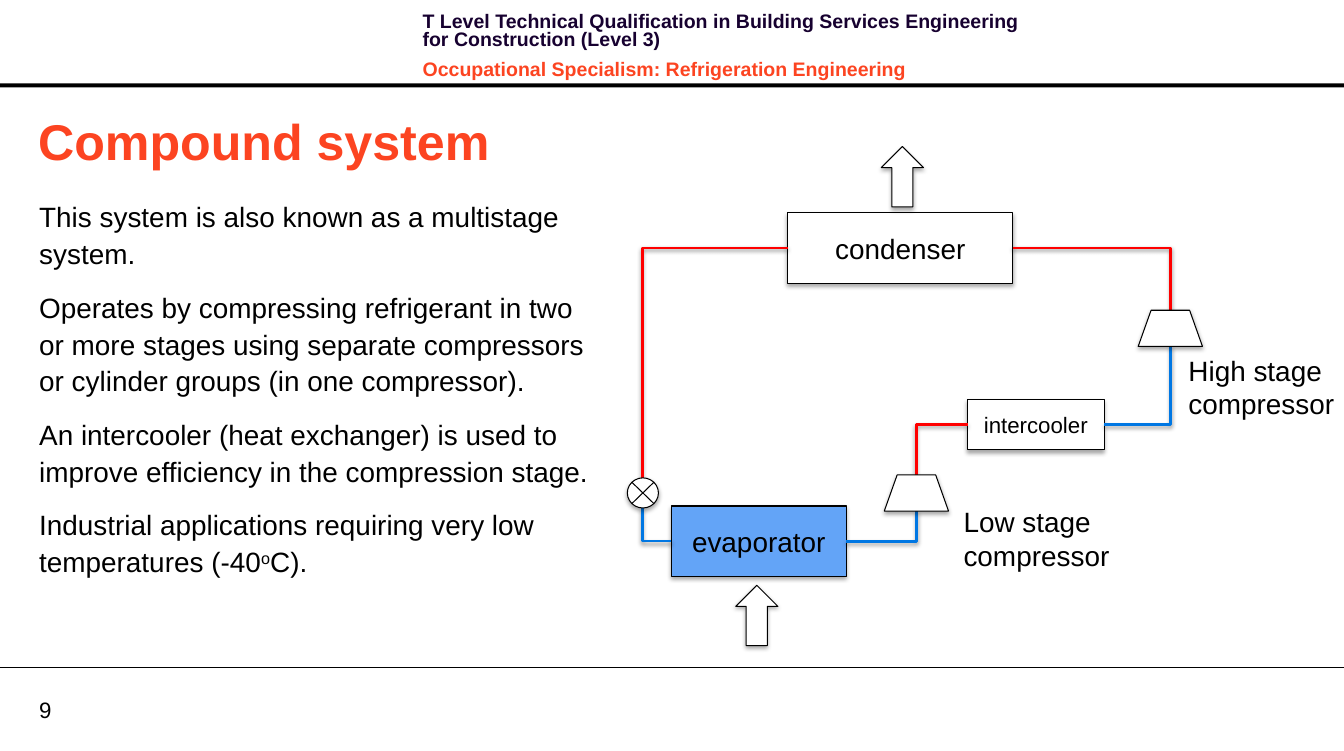
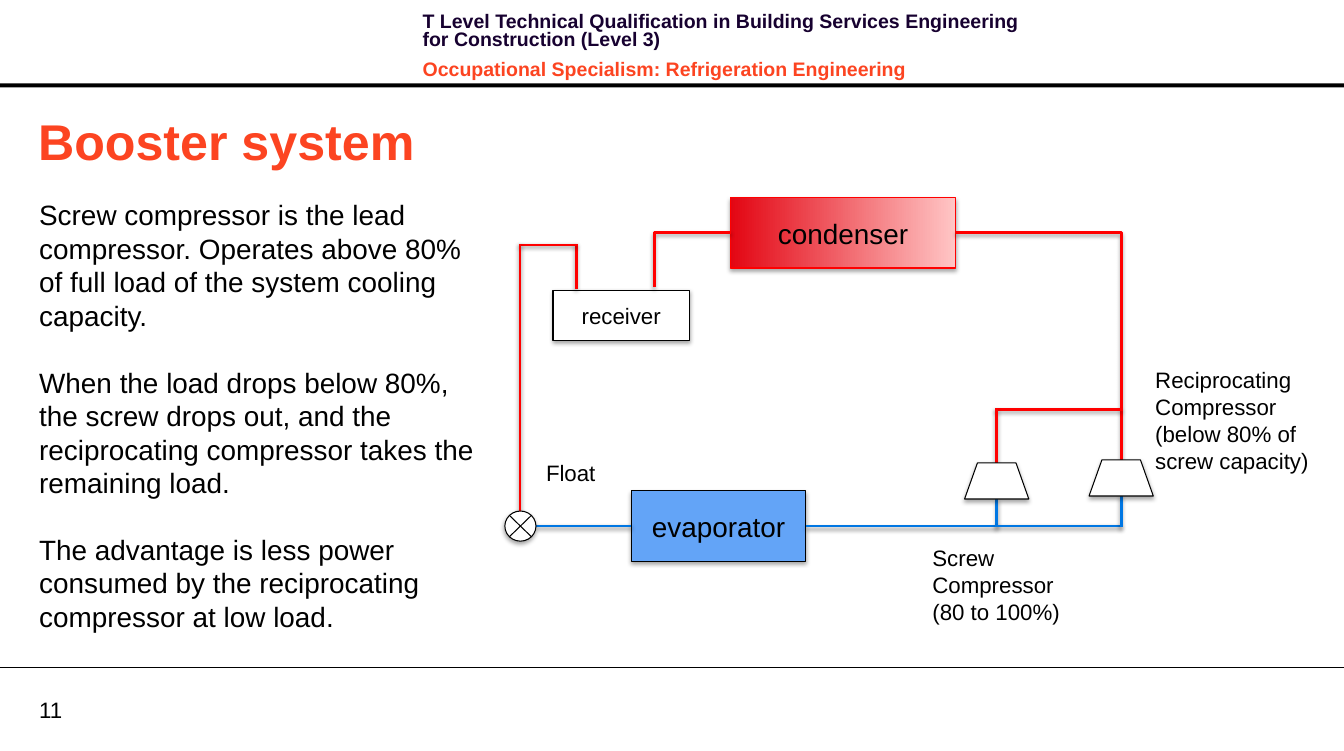
from dataclasses import dataclass

import lxml.etree
import pptx
import pptx.dml.color
import pptx.enum.shapes
import pptx.enum.text
import pptx.oxml.ns
import pptx.shapes.autoshape
import pptx.shapes.connector
import pptx.slide
import pptx.util

Inches = pptx.util.Inches
Pt = pptx.util.Pt
qn = pptx.oxml.ns.qn
MSO_SHAPE = pptx.enum.shapes.MSO_SHAPE
STRAIGHT = pptx.enum.shapes.MSO_CONNECTOR.STRAIGHT
ELBOW = pptx.enum.shapes.MSO_CONNECTOR.ELBOW
MIDDLE = pptx.enum.text.MSO_ANCHOR.MIDDLE

# Shared style
FONT = "Arial"
BLACK, WHITE = "000000", "FFFFFF"
NAVY, ORANGE = "170130", "FC4421"
HOT, COLD, ICE = "FF0000", "0077E3", "63A4F7"
WIDTH, HEIGHT = 13.39, 7.48
MARGIN = 0.39


@dataclass
class Text:
    left: float
    top: float
    width: float
    height: float
    paras: list[str]  # text between ^ marks is superscript
    size: float = 20
    color: str = BLACK
    bold: bool = False
    spacing: float | pptx.util.Length = 1.0
    after: float = 0
    middle: bool = False
    last_color: str = ""  # colour of the last paragraph, if it differs


@dataclass
class Box:
    left: float
    top: float
    width: float
    height: float
    label: str
    size: float = 20
    fill: str = WHITE
    fade: str = ""  # second colour, towards the right
    line: str = BLACK


@dataclass
class Symbol:
    kind: pptx.enum.shapes.MSO_SHAPE
    left: float
    top: float
    width: float
    height: float
    rotation: float = 0


@dataclass
class Pipe:
    color: str
    points: list[tuple[float, float]]


@dataclass
class Page:
    number: int
    title: str
    body: Text
    boxes: list[Box]
    pipes: list[Pipe]
    symbols: list[Symbol]
    captions: list[Text]


def compressor(left: float, top: float) -> Symbol:
    return Symbol(MSO_SHAPE.FLOWCHART_MANUAL_OPERATION, left, top, 0.64, 0.36, 180)


def valve(left: float, top: float) -> Symbol:
    return Symbol(MSO_SHAPE.FLOWCHART_SUMMING_JUNCTION, left, top, 0.31, 0.3)


def heat_arrow(left: float, top: float) -> Symbol:
    return Symbol(MSO_SHAPE.UP_ARROW, left, top, 0.42, 0.6)


def condenser(left: float, top: float, **look: str) -> Box:
    return Box(left, top, 2.24, 0.7, "condenser", **look)


def evaporator(left: float, top: float) -> Box:
    return Box(left, top, 1.74, 0.7, "evaporator", fill=ICE)


def vessel(left: float, top: float, label: str) -> Box:
    return Box(left, top, 1.36, 0.5, label, 16)


# Drawing
def rgb(color: str) -> pptx.dml.color.RGBColor:
    return pptx.dml.color.RGBColor.from_string(color)


def style_font(font, size: float, color: str, bold: bool = False) -> None:
    font.name, font.size, font.bold = FONT, Pt(size), bold
    font.color.rgb = rgb(color)


def set_effects(s, opacity: int = 0, distance: int = 0) -> None:
    """Give the shape its own effect list, with a soft shadow if opacity is set."""
    effects = lxml.etree.SubElement(s._element.spPr, qn("a:effectLst"))
    if opacity:
        shadow = lxml.etree.SubElement(
            effects, qn("a:outerShdw"), blurRad="40000", dist=str(distance),
            dir="5400000", rotWithShape="0")
        tint = lxml.etree.SubElement(shadow, qn("a:srgbClr"), val=BLACK)
        lxml.etree.SubElement(tint, qn("a:alpha"), val=str(opacity * 1000))


def add_text(slide: pptx.slide.Slide, t: Text) -> None:
    s = slide.shapes.add_textbox(*map(Inches, (t.left, t.top, t.width, t.height)))
    tf = s.text_frame
    tf.word_wrap = True
    tf.margin_left = tf.margin_top = tf.margin_right = tf.margin_bottom = 0
    if t.middle:
        tf.vertical_anchor = MIDDLE
    colors = [t.color] * (len(t.paras) - 1) + [t.last_color or t.color]
    for i, (para, color) in enumerate(zip(t.paras, colors)):
        p = tf.paragraphs[0] if i == 0 else tf.add_paragraph()
        p.line_spacing = t.spacing
        p.space_after = Pt(t.after)
        for j, part in enumerate(para.split("^")):
            r = p.add_run()
            r.text = part
            style_font(r.font, t.size, color, t.bold)
            if j % 2:
                r._r.get_or_add_rPr().set("baseline", "30000")


def add_box(slide: pptx.slide.Slide, b: Box) -> pptx.shapes.autoshape.Shape:
    s = slide.shapes.add_shape(
        MSO_SHAPE.RECTANGLE, *map(Inches, (b.left, b.top, b.width, b.height)))
    if b.fade:
        s.fill.gradient()
        s.fill.gradient_angle = 180
        for stop, color in zip(s.fill.gradient_stops, (b.fade, b.fill)):
            stop.color.rgb = rgb(color)
    else:
        s.fill.solid()
        s.fill.fore_color.rgb = rgb(b.fill)
    s.line.color.rgb = rgb(b.line)
    s.line.width = Pt(0.75)
    set_effects(s, 35, 23000)
    tf = s.text_frame
    tf.text = b.label
    tf.vertical_anchor = MIDDLE
    p = tf.paragraphs[0]
    p.alignment = pptx.enum.text.PP_ALIGN.CENTER
    style_font(p.runs[0].font, b.size, BLACK)
    return s


def add_symbol(slide: pptx.slide.Slide, m: Symbol) -> None:
    s = slide.shapes.add_shape(m.kind, *map(Inches, (m.left, m.top, m.width, m.height)))
    s.rotation = m.rotation
    s.fill.solid()
    s.fill.fore_color.rgb = rgb(WHITE)
    s.line.color.rgb = rgb(BLACK)
    s.line.width = Pt(0.75)
    set_effects(s, 35, 23000)


def add_line(slide: pptx.slide.Slide, start: tuple[float, float], end: tuple[float, float],
             color: str, width: float, kind=STRAIGHT) -> pptx.shapes.connector.Connector:
    s = slide.shapes.add_connector(kind, *map(Inches, start + end))
    s.line.color.rgb = rgb(color)
    s.line.width = Pt(width)
    return s


def find_side(boxes: list[pptx.shapes.autoshape.Shape], point: tuple[float, float]):
    """Return the box and its side (1 left, 3 right) whose middle is at the point."""
    x, y = map(Inches, point)
    for s in boxes:
        for side, edge in ((1, s.left), (3, s.left + s.width)):
            if max(abs(edge - x), abs(s.top + s.height // 2 - y)) < Inches(0.01):
                return s, side
    return None


def add_pipe(slide: pptx.slide.Slide, pipe: Pipe,
             boxes: list[pptx.shapes.autoshape.Shape]) -> None:
    """Draw one elbow from a box, or else straight runs."""
    points = pipe.points
    elbow = len(points) == 3 and find_side(boxes, points[0]) is not None
    runs = [(points[0], points[-1])] if elbow else zip(points, points[1:])
    for start, end in runs:
        s = add_line(slide, start, end, pipe.color, 2, ELBOW if elbow else STRAIGHT)
        if elbow:  # a single bend
            s._element.spPr.find(qn("a:prstGeom")).set("prst", "bentConnector2")
        elif len(points) > 2:  # closes the corners
            s._element.spPr.find(qn("a:ln")).set("cap", "sq")
        set_effects(s, 38, 20000)
        for connect, point in ((s.begin_connect, start), (s.end_connect, end)):
            joint = find_side(boxes, point)
            if joint:
                connect(*joint)


def add_frame(slide: pptx.slide.Slide, page: Page) -> None:
    """Header, rules, page number and title."""
    band = slide.shapes.add_shape(
        MSO_SHAPE.RECTANGLE, 0, Inches(0.83), Inches(WIDTH), Inches(0.04))
    band.shadow.inherit = False
    band.fill.solid()
    band.fill.fore_color.rgb = rgb(BLACK)
    band.line.fill.background()
    add_text(slide, Text(4.21, 0.14, 5.98, 0.64, [
        "T Level Technical Qualification in Building Services Engineering "
        "for Construction (Level 3)",
        "Occupational Specialism: Refrigeration Engineering",
    ], 14, NAVY, True, Pt(13.1), 8, last_color=ORANGE))
    set_effects(add_line(slide, (0, 6.65), (WIDTH, 6.65), BLACK, 0.75))
    add_text(slide, Text(MARGIN, 6.93, 0.64, 0.27, [str(page.number)], 16, middle=True))
    add_text(slide, Text(0.38, 1.04, 12.5, 0.71, [page.title], 36, ORANGE, True, middle=True))


def add_page(prs, page: Page) -> None:
    slide = prs.slides.add_slide(prs.slide_layouts[6])
    add_frame(slide, page)
    add_text(slide, page.body)
    boxes = [add_box(slide, b) for b in page.boxes]
    for pipe in page.pipes:
        add_pipe(slide, pipe, boxes)
    for m in page.symbols:
        add_symbol(slide, m)
    for t in page.captions:
        add_text(slide, t)


# Content
COMPOUND = Page(
    9, "Compound system",
    Text(MARGIN, 1.96, 5.59, 3.81, [
        "This system is also known as a multistage system.",
        "Operates by compressing refrigerant in two or more stages using separate "
        "compressors or cylinder groups (in one compressor).",
        "An intercooler (heat exchanger) is used to improve efficiency in the "
        "compression stage.",
        "Industrial applications requiring very low temperatures (-40^o^C).",
    ], spacing=1.1, after=12),
    [condenser(7.85, 2.12), vessel(9.64, 3.98, "intercooler"), evaporator(6.69, 5.04)],
    [Pipe(HOT, [(7.85, 2.47), (6.4, 2.47), (6.4, 4.76)]),
     Pipe(HOT, [(10.09, 2.47), (11.66, 2.47), (11.66, 3.09)]),
     Pipe(HOT, [(9.64, 4.23), (9.13, 4.23), (9.13, 4.73)]),
     Pipe(COLD, [(11, 4.23), (11.66, 4.23), (11.66, 3.45)]),
     Pipe(COLD, [(8.43, 5.39), (9.13, 5.39), (9.13, 5.09)]),
     Pipe(COLD, [(6.69, 5.39), (6.4, 5.39), (6.4, 5.06)])],
    [compressor(11.34, 3.09), compressor(8.81, 4.73), valve(6.25, 4.76),
     heat_arrow(7.33, 5.83), heat_arrow(8.78, 1.46)],
    [Text(9.6, 5.03, 1.67, 0.67, ["Low stage compressor"]),
     Text(11.84, 3.52, 1.55, 0.67, ["High stage compressor"])],
)

BOOSTER = Page(
    11, "Booster system",
    Text(MARGIN, 1.97, 4.46, 4.48, [
        "Screw compressor is the lead compressor. Operates above 80% of full load of "
        "the system cooling capacity.",
        "When the load drops below 80%, the screw drops out, and the reciprocating "
        "compressor takes the remaining load.",
        "The advantage is less power consumed by the reciprocating compressor at low load.",
    ], after=24),
    [condenser(7.28, 1.97, fill="E30613", fade="FFC5C5", line=HOT),
     vessel(5.51, 2.89, "receiver"), evaporator(6.29, 4.89)],
    [Pipe(HOT, [(7.28, 2.32), (6.52, 2.32), (6.52, 2.86)]),
     Pipe(HOT, [(5.74, 2.86), (5.74, 2.44), (5.18, 2.44), (5.18, 5.09)]),
     Pipe(HOT, [(9.52, 2.32), (11.17, 2.32), (11.17, 4.58)]),
     Pipe(HOT, [(11.17, 4.08), (9.93, 4.08), (9.93, 4.61)]),
     Pipe(COLD, [(8.03, 5.24), (9.93, 5.24), (9.93, 4.97)]),
     Pipe(COLD, [(9.93, 5.24), (11.17, 5.24), (11.17, 4.94)]),
     Pipe(COLD, [(5.34, 5.24), (6.29, 5.24)])],
    [compressor(10.85, 4.58), compressor(9.61, 4.61), valve(5.03, 5.09)],
    [Text(11.51, 3.65, 1.77, 1.08,
          ["Reciprocating", "Compressor (below 80% of screw capacity)"], 16),
     Text(5.44, 4.57, 0.6, 0.27, ["Float"], 16),
     Text(9.29, 5.42, 1.46, 0.81, ["Screw", "Compressor (80 to 100%)"], 16)],
)


def main() -> None:
    prs = pptx.Presentation()
    prs.slide_width, prs.slide_height = Inches(WIDTH), Inches(HEIGHT)
    for page in (COMPOUND, BOOSTER):
        add_page(prs, page)
    prs.save("out.pptx")


if __name__ == "__main__":
    main()
